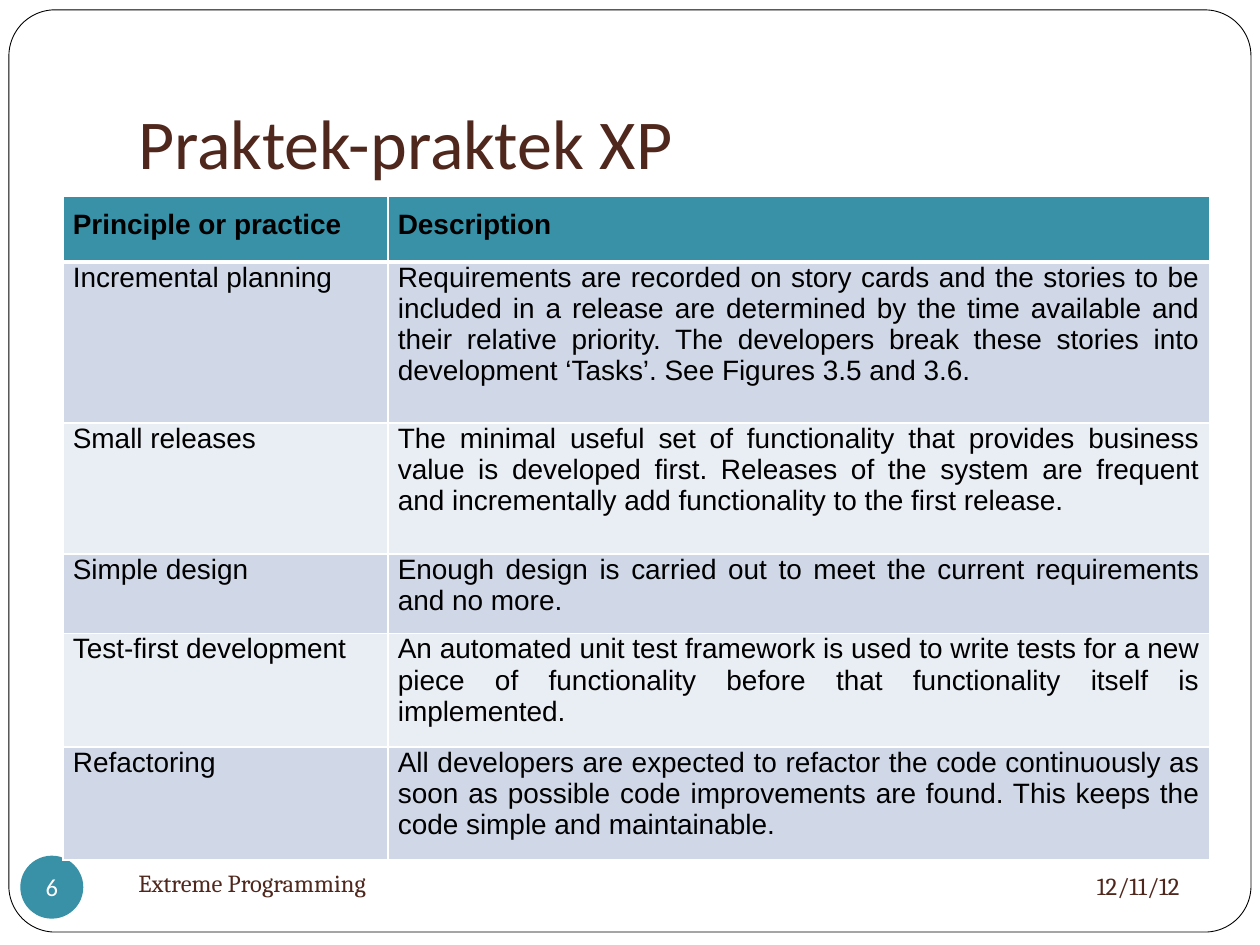
from lxml import etree
from pptx import Presentation
from pptx.dml.color import RGBColor
from pptx.enum.shapes import MSO_SHAPE
from pptx.enum.text import MSO_ANCHOR, PP_ALIGN
from pptx.oxml.ns import qn
from pptx.util import Cm, Pt

ROUNDED, OVAL = MSO_SHAPE.ROUNDED_RECTANGLE, MSO_SHAPE.OVAL
TOP, MIDDLE, BOTTOM = MSO_ANCHOR.TOP, MSO_ANCHOR.MIDDLE, MSO_ANCHOR.BOTTOM
LEFT, CENTER, RIGHT, JUSTIFY = PP_ALIGN.LEFT, PP_ALIGN.CENTER, PP_ALIGN.RIGHT, PP_ALIGN.JUSTIFY

TEAL, BROWN, WHITE, BLACK = "3891A7", "4F271C", "FFFFFF", "000000"
BANDS = ("D0D8E8", "E9EDF4")
COLUMN_WIDTHS = (6.55, 16.56)
ROW_HEIGHTS = (1.32, 3.25, 2.64, 1.45, 2.06, 2.06)
PRACTICES = (
    ("Principle or practice", "Description"),
    ("Incremental planning",
     "Requirements are recorded on story cards and the stories to be included in a release "
     "are determined by the time available and their relative priority. The developers break "
     "these stories into development ‘Tasks’. See Figures 3.5 and 3.6."),
    ("Small releases",
     "The minimal useful set of functionality that provides business value is developed first. "
     "Releases of the system are frequent and incrementally add functionality to the first release."),
    ("Simple design ",
     "Enough design is carried out to meet the current requirements and no more."),
    ("Test-first development",
     "An automated unit test framework is used to write tests for a new piece of functionality "
     "before that functionality itself is implemented."),
    ("Refactoring",
     "All developers are expected to refactor the code continuously as soon as possible code "
     "improvements are found. This keeps the code simple and maintainable."),
)


def color(hex_code):
    """Turn a hex string into a colour."""
    return RGBColor.from_string(hex_code)


def write(frame, text, font, size, ink, align=LEFT, bold=False):
    """Put one formatted run into the first paragraph of a text frame."""
    paragraph = frame.paragraphs[0]
    paragraph.alignment = align
    run = paragraph.add_run()
    run.text = text
    run.font.name, run.font.size, run.font.bold = font, Pt(size), bold
    run.font.color.rgb = color(ink)


def set_margins(holder, left, top, right, bottom):
    """Set the four text margins in centimetres."""
    holder.margin_left, holder.margin_top = Cm(left), Cm(top)
    holder.margin_right, holder.margin_bottom = Cm(right), Cm(bottom)


def add_label(slide, box, text, font, size, anchor=MIDDLE, align=LEFT, bottom=0.13):
    """Add a brown text box."""
    frame = slide.shapes.add_textbox(*map(Cm, box)).text_frame
    frame.word_wrap = True
    frame.vertical_anchor = anchor
    set_margins(frame, 0.25, 0.13, 0.25, bottom)
    write(frame, text, font, size, BROWN, align)


def add_panel(slide, preset, box, fill):
    """Add a filled shape without line or shadow."""
    panel = slide.shapes.add_shape(preset, *map(Cm, box))
    panel.shadow.inherit = False
    panel.fill.solid()
    panel.fill.fore_color.rgb = color(fill)
    panel.line.fill.background()
    return panel


def add_frame(slide):
    """Add the rounded outline around the slide."""
    outline = add_panel(slide, ROUNDED, (0.18, 0.2, 25.04, 18.59), WHITE)
    outline.adjustments[0] = 0.05
    outline.line.color.rgb = color(BLACK)
    outline.line.width = Pt(0.5)


def add_page_badge(slide, number):
    """Add the round page number."""
    frame = add_panel(slide, OVAL, (0.41, 17.25, 1.27, 1.27), TEAL).text_frame
    frame.word_wrap = False
    frame.vertical_anchor = MIDDLE
    set_margins(frame, 0, 0, 0, 0)
    write(frame, number, "Calibri", 14, WHITE, CENTER)


def add_borders(cell, top, bottom):
    """Draw white cell borders with the given top and bottom widths in points."""
    properties = cell._tc.get_or_add_tcPr()
    for side, width in (("L", 1), ("R", 1), ("T", top), ("B", bottom)):
        border = etree.SubElement(properties, qn(f"a:ln{side}"), w=str(Pt(width)))
        fill = etree.SubElement(border, qn("a:solidFill"))
        etree.SubElement(fill, qn("a:srgbClr"), val=WHITE)


def fill_cell(cell, text, row):
    """Style and write one table cell according to its row."""
    header = row == 0
    add_borders(cell, 3 if row == 1 else 1, 3 if header else 1)
    cell.fill.solid()
    cell.fill.fore_color.rgb = color(TEAL if header else BANDS[(row - 1) % 2])
    cell.vertical_anchor = TOP
    set_margins(cell, 0.2, 0.25 if header else 0, 0.2, 0.25)
    write(cell.text_frame, text, "Arial", 16, BLACK, JUSTIFY, header)


def add_practice_table(slide):
    """Add the table of practices."""
    table = slide.shapes.add_table(
        len(PRACTICES), len(COLUMN_WIDTHS), Cm(1.27), Cm(3.96),
        Cm(sum(COLUMN_WIDTHS)), Cm(sum(ROW_HEIGHTS))).table
    for column, width in zip(table.columns, COLUMN_WIDTHS):
        column.width = Cm(width)
    for row, (height, texts) in enumerate(zip(ROW_HEIGHTS, PRACTICES)):
        table.rows[row].height = Cm(height)
        for column, text in enumerate(texts):
            fill_cell(table.cell(row, column), text, row)


def main():
    """Build and save the slide."""
    deck = Presentation()
    deck.slide_width, deck.slide_height = Cm(25.4), Cm(19.05)
    slide = deck.slides.add_slide(deck.slide_layouts[6])
    add_frame(slide)
    add_label(slide, (2.54, 0.76, 21.59, 3.18), "Praktek-praktek XP", "Calibri", 40,
              BOTTOM, bottom=0.25)
    add_label(slide, (17.15, 17.2, 6.88, 1.32), "12/11/12", "Cambria", 14, align=RIGHT)
    add_label(slide, (2.54, 17.15, 11, 1.27), "Extreme Programming", "Cambria", 14)
    add_page_badge(slide, "6")
    add_practice_table(slide)
    deck.save("out.pptx")


if __name__ == "__main__":
    main()
